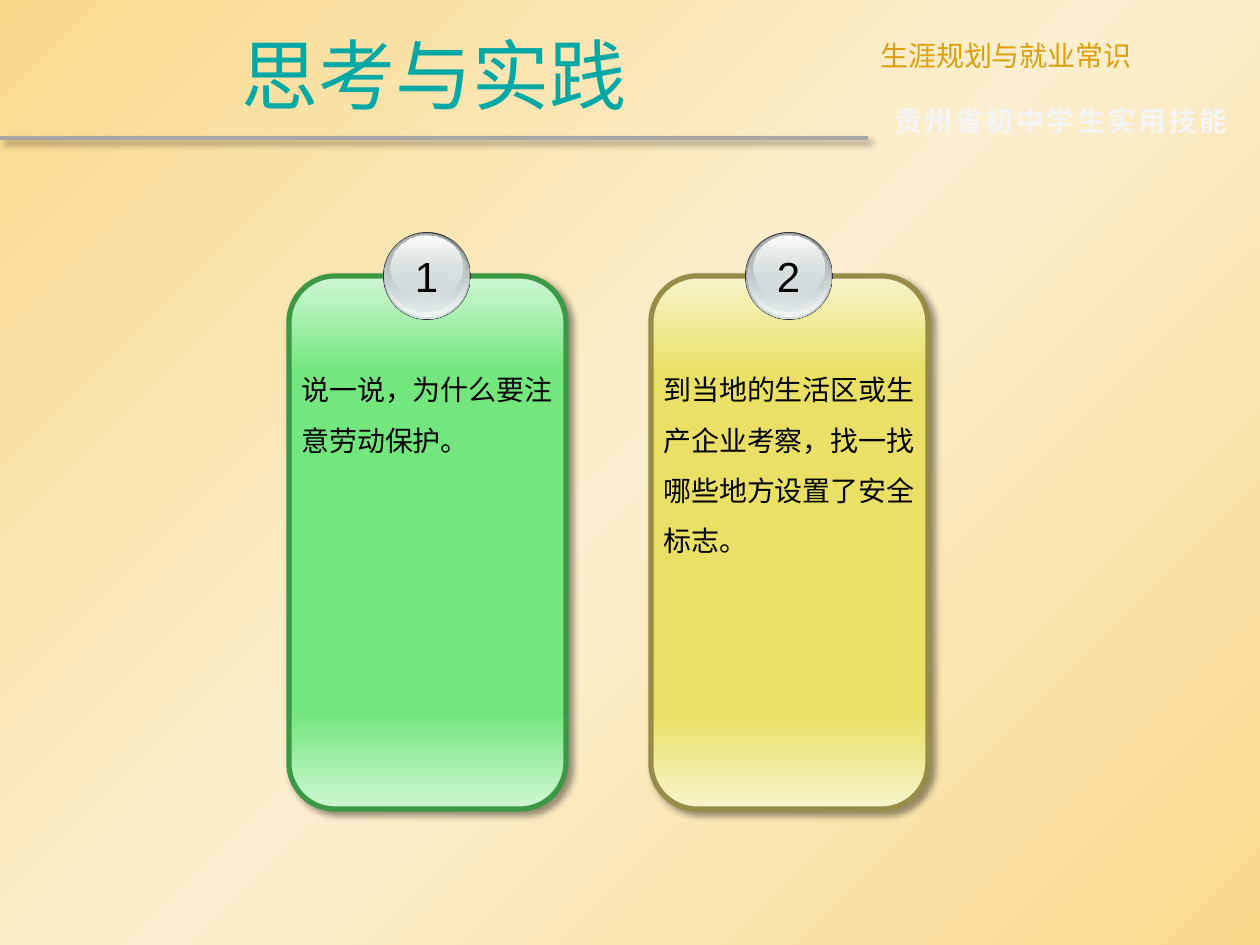
"""Build the slide on thinking and practice, with two numbered task cards."""
from dataclasses import dataclass

from lxml import etree
from pptx import Presentation
from pptx.dml.color import RGBColor
from pptx.enum.shapes import MSO_CONNECTOR, MSO_SHAPE
from pptx.enum.text import MSO_ANCHOR, PP_ALIGN
from pptx.oxml.ns import qn
from pptx.util import Emu, Pt

PX_PER_INCH = 126
PAGE_WIDTH, PAGE_HEIGHT = 1260, 945
CARD_TOP, CARD_WIDTH, CARD_HEIGHT = 276, 277, 533
FIRST_CARD_LEFT, CARD_PITCH = 289, 362

STRAIGHT = MSO_CONNECTOR.STRAIGHT
ROUNDED, ELLIPSE = MSO_SHAPE.ROUNDED_RECTANGLE, MSO_SHAPE.OVAL
LEFT, CENTER, JUSTIFY = PP_ALIGN.LEFT, PP_ALIGN.CENTER, PP_ALIGN.JUSTIFY
TOP, MIDDLE = MSO_ANCHOR.TOP, MSO_ANCHOR.MIDDLE

CJK_FONT, LATIN_FONT = "Noto Sans CJK SC", "Arial"
BLACK = RGBColor(0x00, 0x00, 0x00)
WHITE = RGBColor(0xFF, 0xFF, 0xFF)
GRAY = RGBColor(0xA6, 0xA6, 0xA6)
PALE = RGBColor(0xF5, 0xF5, 0xF7)
TEAL = RGBColor(0x04, 0xA8, 0xA4)
AMBER = RGBColor(0xDC, 0x9F, 0x0C)
SAND = RGBColor(0xF9, 0xD9, 0x8C)
CREAM = RGBColor(0xFC, 0xEF, 0xCF)
GREEN = RGBColor(0x73, 0xE7, 0x7E)
LIGHT_GREEN = RGBColor(0xD0, 0xF7, 0xD4)
DARK_GREEN = RGBColor(0x3C, 0x98, 0x44)
YELLOW = RGBColor(0xE9, 0xE0, 0x65)
LIGHT_YELLOW = RGBColor(0xF8, 0xF5, 0xCC)
DARK_YELLOW = RGBColor(0x97, 0x8D, 0x48)
CHARCOAL = RGBColor(0x33, 0x33, 0x33)
STEEL = RGBColor(0x63, 0x68, 0x69)
SILVER = RGBColor(0xAA, 0xB2, 0xB3)
MIST = RGBColor(0xD6, 0xE1, 0xE2)
FROST = RGBColor(0xF1, 0xF5, 0xF5)


@dataclass(frozen=True)
class Stop:
    position: int
    color: RGBColor
    opacity: int = 100


@dataclass(frozen=True)
class Layer:
    left: int
    top: int
    width: int
    height: int
    stops: tuple[Stop, ...]


@dataclass(frozen=True)
class Card:
    number: str
    text: str
    text_height: int
    color: RGBColor
    light: RGBColor
    border: RGBColor


BADGE_LAYERS = (
    Layer(94, 232, 88, 88, (Stop(0, CHARCOAL), Stop(100, CHARCOAL))),
    Layer(95, 233, 86, 86, (Stop(0, STEEL), Stop(100, MIST))),
    Layer(96, 233, 83, 84, (Stop(0, MIST, 0), Stop(100, FROST))),
    Layer(97, 234, 79, 78, (Stop(0, SILVER), Stop(100, MIST, 48))),
    Layer(102, 236, 71, 63, (Stop(0, WHITE), Stop(100, MIST, 38))),
)
CARDS = (
    Card("1", "说一说，为什么要注意劳动保护。", 115,
         GREEN, LIGHT_GREEN, DARK_GREEN),
    Card("2", "到当地的生活区或生产企业考察，找一找哪些地方设置了安全标志。", 217,
         YELLOW, LIGHT_YELLOW, DARK_YELLOW),
)


def px(length: int) -> Emu:
    """Turn pixels into EMU."""
    return Emu(round(length * 914400 / PX_PER_INCH))


def add_color(parent, color: RGBColor, opacity: int) -> None:
    """Append a colour with its opacity in percent."""
    node = etree.SubElement(parent, qn("a:srgbClr"), val=str(color))
    if opacity < 100:
        etree.SubElement(node, qn("a:alpha"), val=str(opacity * 1000))


def paint_gradient(fill, owner, stops: tuple[Stop, ...], angle: int) -> None:
    """Give a fill a linear gradient at a clockwise angle."""
    fill.gradient()
    fill.gradient_angle = 360 - angle
    stop_list = next(owner.iter(qn("a:gsLst")))
    for old_stop in list(stop_list):
        stop_list.remove(old_stop)
    for stop in stops:
        node = etree.SubElement(stop_list, qn("a:gs"), pos=str(stop.position * 1000))
        add_color(node, stop.color, stop.opacity)


def add_shadow(item) -> None:
    """Put a soft shadow at the lower right of a shape or connector."""
    properties = item.element.spPr
    effects = properties.find(qn("a:effectLst"))
    if effects is None:
        effects = etree.SubElement(properties, qn("a:effectLst"))
    shadow = etree.SubElement(
        effects, qn("a:outerShdw"), blurRad=str(Pt(4)), dist=str(Pt(3)),
        dir="2700000", algn="tl", rotWithShape="0")
    add_color(shadow, BLACK, 40)


def add_text(shapes, text: str, left: int, top: int, width: int, height: int, *,
             size: int = 16, color: RGBColor = BLACK, font: str = CJK_FONT,
             align: PP_ALIGN = LEFT, anchor: MSO_ANCHOR = TOP, wrap: bool = True,
             line_spacing: float = 1.0, bold: bool = False,
             tracking: int = 0) -> None:
    """Add a text box with one formatted paragraph."""
    box = shapes.add_textbox(px(left), px(top), px(width), px(height))
    frame = box.text_frame
    frame.word_wrap = wrap
    frame.vertical_anchor = anchor
    para = frame.paragraphs[0]
    para.alignment = align
    para.line_spacing = line_spacing
    span = para.add_run()
    span.text = text
    span.font.size = Pt(size)
    span.font.bold = bold
    span.font.color.rgb = color
    span.font.name = font
    properties = span.font._element
    etree.SubElement(properties, qn("a:ea"), typeface=font)
    if tracking:
        properties.set("spc", str(tracking))


def add_filled(shapes, kind: MSO_SHAPE, layer: Layer, offset: int = 0):
    """Add a shape without outline, filled from top to bottom."""
    shape = shapes.add_shape(kind, px(layer.left + offset), px(layer.top),
                             px(layer.width), px(layer.height))
    shape.shadow.inherit = False
    paint_gradient(shape.fill, shape.element, layer.stops, 90)
    shape.line.fill.background()
    return shape


def add_card(page, card: Card, left: int) -> None:
    """Add a grouped card with its text and round number badge."""
    shapes = page.shapes.add_group_shape().shapes
    stops = (Stop(0, card.light), Stop(18, card.color),
             Stop(82, card.color), Stop(100, card.light))
    panel = add_filled(shapes, ROUNDED,
                       Layer(left, CARD_TOP, CARD_WIDTH, CARD_HEIGHT, stops))
    panel.line.color.rgb = card.border
    panel.line.width = Pt(3)
    add_shadow(panel)
    add_text(shapes, card.text, left, 350, CARD_WIDTH, card.text_height,
             line_spacing=1.5)
    for layer in BADGE_LAYERS:
        add_filled(shapes, ELLIPSE, layer, left)
    add_text(shapes, card.number, left + 113, 244, 49, 63, size=24,
             font=LATIN_FONT, align=CENTER, wrap=False)


def main() -> None:
    """Build and save the deck."""
    deck = Presentation()
    deck.slide_width, deck.slide_height = px(PAGE_WIDTH), px(PAGE_HEIGHT)
    page = deck.slides.add_slide(deck.slide_layouts[6])
    paint_gradient(page.background.fill, page.element,
                   (Stop(0, SAND), Stop(50, CREAM), Stop(100, SAND)), 45)

    rule = page.shapes.add_connector(STRAIGHT, px(0), px(138), px(868), px(138))
    rule.line.color.rgb = GRAY
    rule.line.width = Pt(2.25)
    add_shadow(rule)

    add_text(page.shapes, "生涯规划与就业常识", 868, 32, 392, 47,
             color=AMBER, align=JUSTIFY)
    add_text(page.shapes, "贵州省初中学生实用技能", 882, 97, 378, 47,
             color=PALE, bold=True, tracking=150)
    add_text(page.shapes, "思考与实践", 0, 9, 868, 129, size=44, color=TEAL,
             align=CENTER, anchor=MIDDLE)

    for index, card in enumerate(CARDS):
        add_card(page, card, FIRST_CARD_LEFT + index * CARD_PITCH)
    deck.save("out.pptx")


if __name__ == "__main__":
    main()
